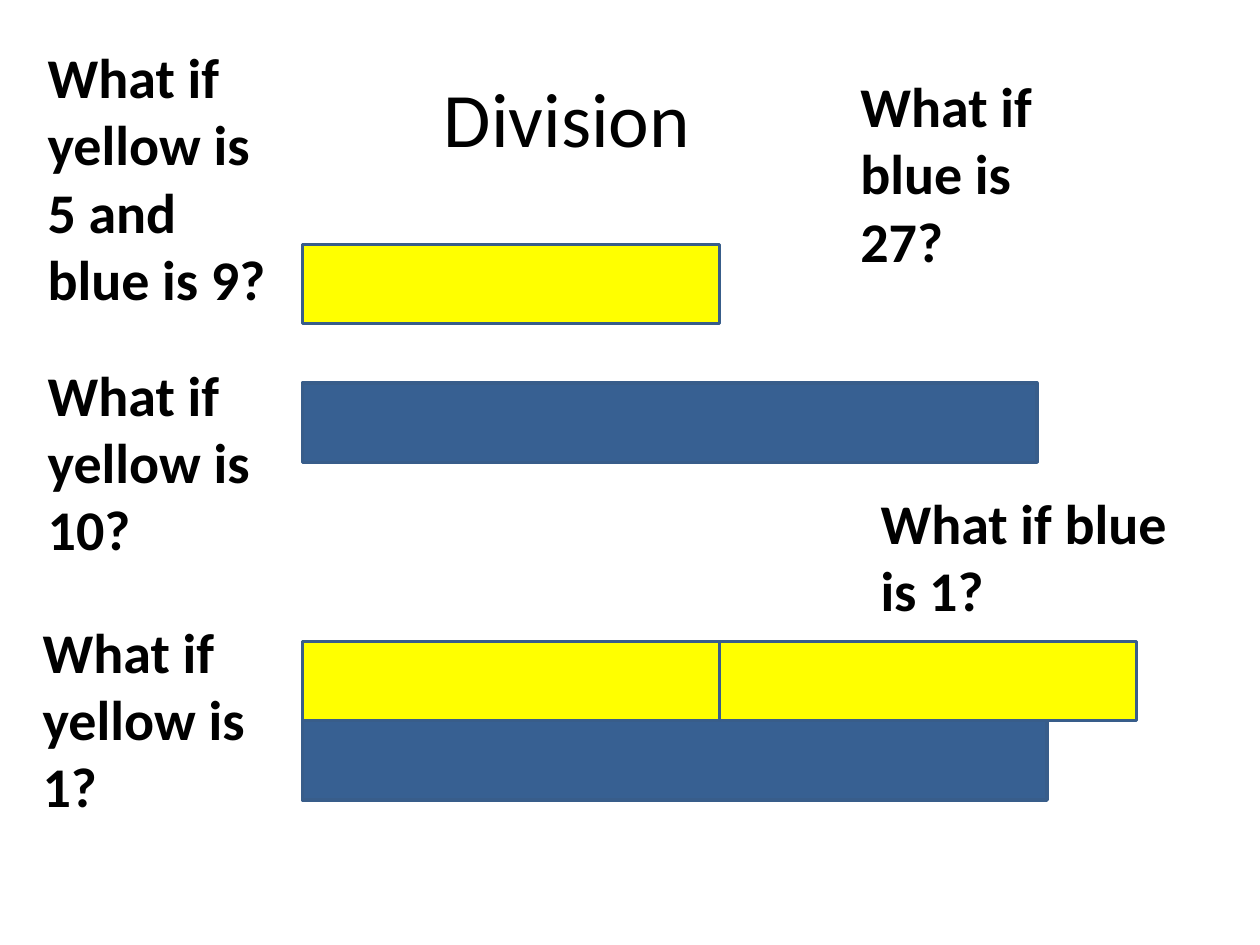
from pptx import Presentation
from pptx.dml.color import RGBColor
from pptx.enum import shapes, text
from pptx.util import Pt

COLORS = {"ink": "000000", "yellow": "FFFF00", "blue": "376092", "outline": "385D8A"}
BAR_LEFT, BAR_HEIGHT = 172.8, 45.36
YELLOW_WIDTH, BLUE_WIDTH, LONG_BLUE_WIDTH = 238.32, 419.76, 425.52
STACK_TOP = 366.48


def color(name):
    return RGBColor.from_string(COLORS[name])


def write(frame, words, size=32, bold=False, align=text.PP_ALIGN.LEFT,
          anchor=text.MSO_ANCHOR.TOP, font="Calibri", ink="ink"):
    frame.word_wrap = True
    frame.vertical_anchor = anchor
    para = frame.paragraphs[0]
    para.alignment = align
    span = para.add_run()
    span.text = words
    span.font.name = font
    span.font.size = Pt(size)
    span.font.bold = bold
    span.font.color.rgb = color(ink)


class BarPage:
    """Holds the bar style and the current slide."""

    line_width = 2

    def __init__(self, deck):
        self.page = deck.slides.add_slide(deck.slide_layouts[5])

    def title(self, words, left, top, width, height):
        box = self.page.shapes.title
        box.left, box.top, box.width, box.height = map(Pt, (left, top, width, height))
        write(box.text_frame, words, size=44, align=text.PP_ALIGN.CENTER,
              anchor=text.MSO_ANCHOR.MIDDLE)

    def bar(self, fill, left, top, width, group=None):
        parent = group or self.page
        box = parent.shapes.add_shape(shapes.MSO_SHAPE.RECTANGLE, Pt(left), Pt(top),
                                      Pt(width), Pt(BAR_HEIGHT))
        box.shadow.inherit = False
        box.fill.solid()
        box.fill.fore_color.rgb = color(fill)
        box.line.color.rgb = color("outline")
        box.line.width = Pt(self.line_width)

    def stack(self, left, top):
        """Two yellow bars end to end above one blue bar, as a group."""
        group = self.page.shapes.add_group_shape()
        self.bar("blue", left, top + BAR_HEIGHT, LONG_BLUE_WIDTH, group)
        for column in range(2):
            self.bar("yellow", left + column * YELLOW_WIDTH, top, YELLOW_WIDTH, group)

    def question(self, words, left, top, width, height):
        box = self.page.shapes.add_textbox(Pt(left), Pt(top), Pt(width), Pt(height))
        write(box.text_frame, words, bold=True)
        box.text_frame.auto_size = text.MSO_AUTO_SIZE.SHAPE_TO_FIT_TEXT


def main():
    deck = Presentation()
    deck.slide_width, deck.slide_height = Pt(720), Pt(540)

    division = BarPage(deck)
    division.title("Division", 0, 21.6, 648, 90)
    division.bar("blue", BAR_LEFT, 218.88, BLUE_WIDTH)
    division.bar("yellow", BAR_LEFT, 139.68, YELLOW_WIDTH)
    division.stack(BAR_LEFT, STACK_TOP)

    questions = [
        ("What if yellow is 5 and blue is 9?", 20.16, 20.88, 141.84, 162.72),
        ("What if yellow is 10?", 20.16, 202.32, 130.32, 123.84),
        ("What if blue is 27?", 484.56, 37.44, 130.32, 123.84),
        ("What if yellow is 1?", 17.28, 349.2, 156.24, 123.84),
        ("What if blue is 1?", 496.08, 275.76, 187.2, 84.96),
    ]
    for question in questions:
        division.question(*question)

    deck.save("out.pptx")


if __name__ == "__main__":
    main()
